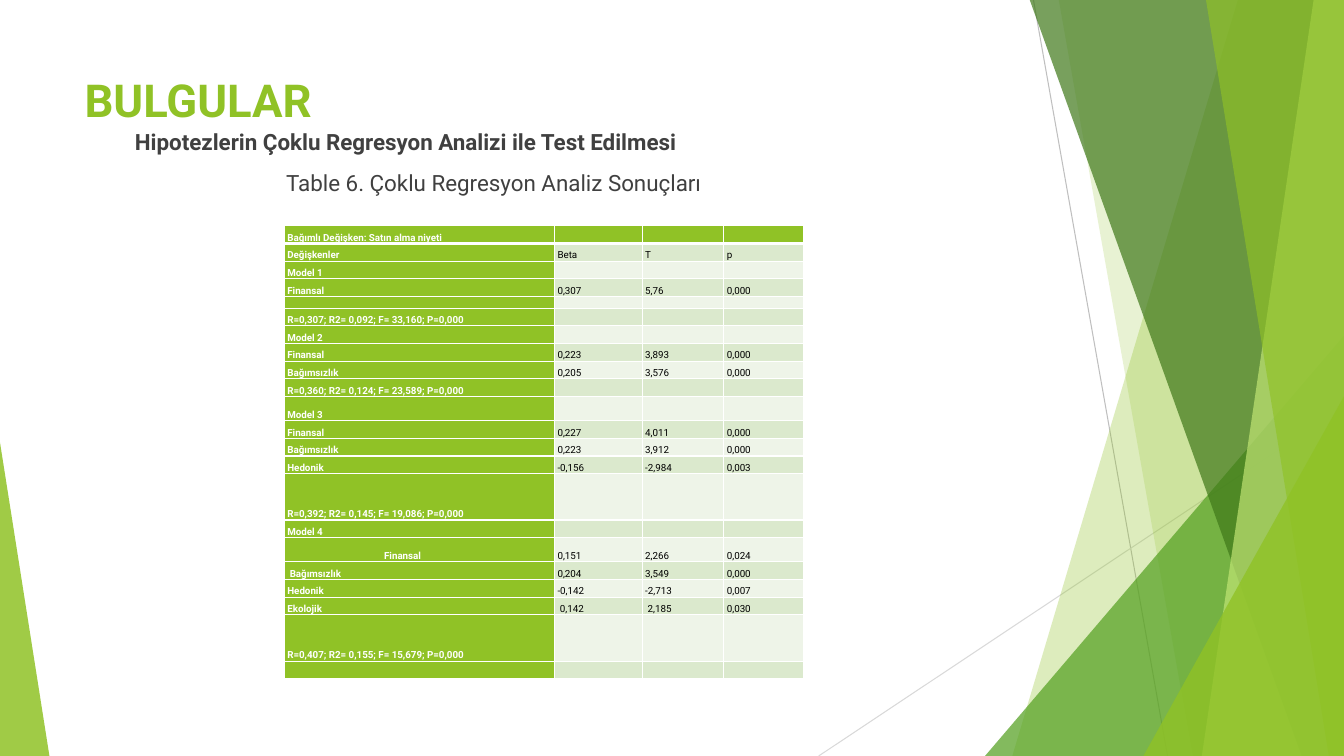
from lxml.etree import SubElement
from pptx import Presentation
from pptx.dml.color import RGBColor
from pptx.enum.shapes import MSO_CONNECTOR as Connector, MSO_SHAPE as Shape
from pptx.enum.text import MSO_ANCHOR as Anchor, PP_ALIGN as Align
from pptx.oxml.ns import qn
from pptx.util import Inches, Pt

FONT = "Roboto"
GREEN, WHITE, BLACK, GREY = "90C226", "FFFFFF", "000000", "404040"
BANDS = ("DBE9CD", "EEF4E8")
TOP, BOTTOM, RIGHT = -0.01, 7.5, 13.33

# Each panel: top left x, bottom left x, colour, opacity in percent
BACK_PANELS = [(12.28, 10.04, GREEN, 30), (10.5, 11.83, GREEN, 20)]
FRONT_PANELS = [
    (10.21, 12.91, "3F7819", 70),
    (13.03, 11.92, "C0E474", 70),
    (11.96, 13.18, GREEN, 65),
]

COLUMN_WIDTHS = [2.68, 0.87, 0.81, 0.79]
ROW_HEIGHT = 0.17
SPECIAL_HEIGHTS = {4: 0.11, 10: 0.24, 14: 0.46, 16: 0.24, 20: 0.46}
INDENTED_ROW = 16
ROWS = [
    ["Bağımlı Değişken: Satın alma niyeti"],
    ["Değişkenler", "Beta", "T", "p"],
    ["Model 1"],
    ["Finansal", "0,307", "5,76", "0,000"],
    [],
    ["R=0,307; R2= 0,092; F= 33,160; P=0,000"],
    ["Model 2"],
    ["Finansal", "0,223", "3,893", "0,000"],
    ["Bağımsızlık", "0,205", "3,576", "0,000"],
    ["R=0,360; R2= 0,124; F= 23,589; P=0,000"],
    ["Model 3"],
    ["Finansal", "0,227", "4,011", "0,000"],
    ["Bağımsızlık", "0,223", "3,912", "0,000"],
    ["Hedonik", "-0,156", "-2,984", "0,003"],
    ["R=0,392; R2= 0,145; F= 19,086; P=0,000"],
    ["Model 4"],
    ["Finansal", "0,151", "2,266", "0,024"],
    [" Bağımsızlık", "0,204", "3,549", "0,000"],
    ["Hedonik", "-0,142", "-2,713", "0,007"],
    ["Ekolojik", " 0,142", " 2,185", "0,030"],
    ["R=0,407; R2= 0,155; F= 15,679; P=0,000"],
    [],
]


def rgb(color):
    return RGBColor.from_string(color)


def style_font(para, size, color, bold):
    font = para.font
    font.name, font.size, font.bold = FONT, Pt(size), bold
    font.color.rgb = rgb(color)


def fill_shape(shape, color, opacity):
    shape.shadow.inherit = False
    shape.line.fill.background()
    shape.fill.solid()
    shape.fill.fore_color.rgb = rgb(color)
    color_node = shape.fill._xPr.find(qn("a:solidFill"))[0]
    SubElement(color_node, qn("a:alpha")).set("val", str(opacity * 1000))


def add_line(slide, start, end, color):
    points = [Inches(value) for value in (*start, *end)]
    line = slide.shapes.add_connector(Connector.STRAIGHT, *points)
    line.line.color.rgb = rgb(color)
    line.line.width = Pt(0.75)
    SubElement(line._element.spPr, qn("a:effectLst"))


def add_panel(slide, top_x, bottom_x, color, opacity):
    """Add a full-height panel that reaches the right edge of the slide."""
    corners = [(top_x, TOP), (RIGHT, TOP), (RIGHT, BOTTOM), (bottom_x, BOTTOM)]
    start, *others = [(Inches(x), Inches(y)) for x, y in corners]
    builder = slide.shapes.build_freeform(*start)
    builder.add_line_segments(others, close=True)
    fill_shape(builder.convert_to_shape(), color, opacity)


def add_triangle(slide, left, top, width, apex, color, opacity):
    """Add a triangle that stands on the bottom edge of the slide."""
    frame = [Inches(value) for value in (left, top, width, BOTTOM - top)]
    triangle = slide.shapes.add_shape(Shape.ISOSCELES_TRIANGLE, *frame)
    triangle.adjustments[0] = apex
    fill_shape(triangle, color, opacity)


def add_background(slide):
    add_line(slide, (10.25, 0), (11.58, BOTTOM), "BFBFBF")
    add_line(slide, (RIGHT, 4.03), (8.12, BOTTOM), "D9D9D9")
    for panel in BACK_PANELS:
        add_panel(slide, *panel)
    add_triangle(slide, 9.77, 3.33, 3.56, 1, "54A021", 72)
    for panel in FRONT_PANELS:
        add_panel(slide, *panel)
    add_triangle(slide, 11.34, 3.93, 1.99, 1, GREEN, 80)
    add_triangle(slide, 0, 4.39, 0.49, 0, GREEN, 85)


def add_text(slide, top, height, size, color, lines):
    """Add a text box; each line is its text, left indent and boldness."""
    box = slide.shapes.add_textbox(Inches(0.74), Inches(top), Inches(9.4), Inches(height))
    frame = box.text_frame
    frame.word_wrap = True
    for number, (text, indent, bold) in enumerate(lines):
        para = frame.add_paragraph() if number else frame.paragraphs[0]
        para.text = text
        para.space_before = Pt(10 if number else 0)
        para._p.get_or_add_pPr().set("marL", str(Inches(indent)))
        style_font(para, size, color, bold)


def add_borders(cell, bottom_width):
    properties = cell._tc.get_or_add_tcPr()
    for side, width in (("L", 1), ("R", 1), ("T", 1), ("B", bottom_width)):
        border = SubElement(properties, qn(f"a:ln{side}"), w=str(Pt(width)))
        fill = SubElement(border, qn("a:solidFill"))
        SubElement(fill, qn("a:srgbClr"), val=WHITE)


def fill_cell(cell, text, fill, color, bold):
    cell.fill.solid()
    cell.fill.fore_color.rgb = rgb(fill)
    cell.vertical_anchor = Anchor.BOTTOM
    cell.margin_left = cell.margin_right = Inches(0.03)
    cell.margin_top = cell.margin_bottom = 0
    para = cell.text_frame.paragraphs[0]
    style_font(para, 7, color, bold)
    if text:
        para.text = text
        para.alignment = Align.JUSTIFY
        para.line_spacing = 1.5
        para.space_after = Pt(8)
    else:
        para._p.get_or_add_endParaRPr().set("sz", "700")


def add_results_table(slide):
    heights = [SPECIAL_HEIGHTS.get(row, ROW_HEIGHT) for row in range(len(ROWS))]
    table = slide.shapes.add_table(
        len(ROWS), len(COLUMN_WIDTHS), Inches(2.82), Inches(2.24),
        Inches(sum(COLUMN_WIDTHS)), Inches(sum(heights))).table
    table.first_row = table.horz_banding = False
    for column, width in zip(table.columns, COLUMN_WIDTHS):
        column.width = Inches(width)
    for row, (texts, height) in enumerate(zip(ROWS, heights)):
        table.rows[row].height = Inches(height)
        for column in range(len(COLUMN_WIDTHS)):
            cell = table.cell(row, column)
            heading = row == 0 or column == 0
            text = texts[column] if column < len(texts) else ""
            add_borders(cell, 1 if row else 3)
            fill_cell(cell, text, GREEN if heading else BANDS[(row - 1) % 2],
                      WHITE if heading else BLACK, heading)
    table.cell(INDENTED_ROW, 0).margin_left = Inches(0.99)


def main():
    deck = Presentation()
    deck.slide_width, deck.slide_height = Inches(RIGHT), Inches(BOTTOM)
    slide = deck.slides.add_slide(deck.slide_layouts[6])
    add_background(slide)
    add_text(slide, 0.67, 0.89, 32.4, GREEN, [("BULGULAR", 0, True)])
    add_text(slide, 1.22, 5.38, 16, GREY, [
        ("Hipotezlerin Çoklu Regresyon Analizi ile Test Edilmesi", 0.5, True),
        ("Table 6. Çoklu Regresyon Analiz Sonuçları", 2, False),
    ])
    add_results_table(slide)
    deck.save("out.pptx")


if __name__ == "__main__":
    main()
